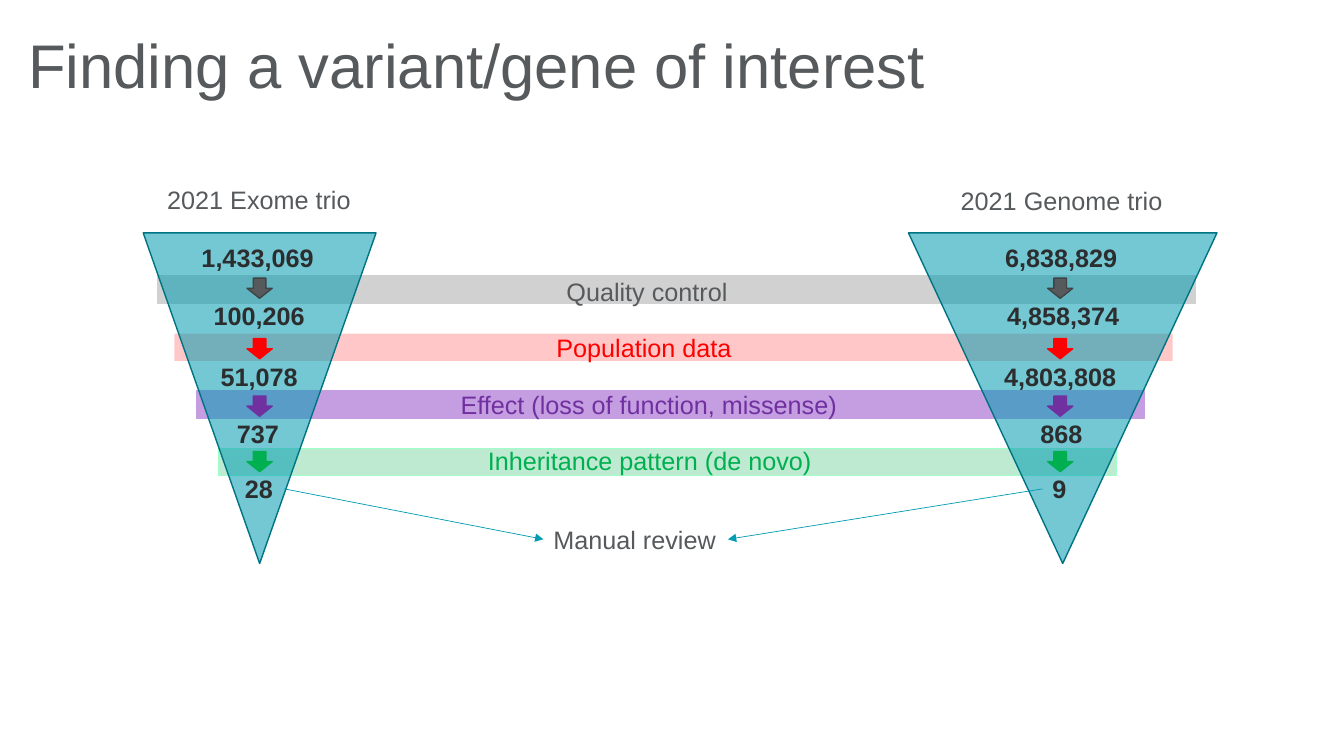
from pptx import Presentation
from pptx.dml.color import RGBColor
from pptx.enum.shapes import MSO_CONNECTOR as Connector, MSO_SHAPE as Preset
from pptx.enum.text import MSO_ANCHOR as Anchor, PP_ALIGN as Align
from pptx.oxml.ns import qn
from pptx.util import Inches, Pt
from lxml.etree import SubElement


def colour(code):
    return RGBColor.from_string(code)


class FunnelPage:
    font = "Arial"
    grey = "565A5C"
    dark = "2B2D2E"
    teal = "009CB1"
    edge = "007383"

    def __init__(self, deck):
        self.page = deck.slides.add_slide(deck.slide_layouts[5])

    def set_text(self, box, words, size, code, bold=False):
        para = box.text_frame.paragraphs[0]
        para.text = words
        para.alignment = Align.LEFT
        para.font.name = self.font
        para.font.size = Pt(size)
        para.font.bold = bold
        para.font.color.rgb = colour(code)
        return para

    def title(self, words):
        box = self.page.shapes.title
        box.left, box.top = Inches(0.18), Inches(0.3)
        box.width, box.height = Inches(11.5), Inches(1.09)
        box.text_frame.vertical_anchor = Anchor.TOP
        self.set_text(box, words, 44, self.grey).line_spacing = 0.9

    def label(self, words, left, top, width, code=grey, bold=False):
        box = self.page.shapes.add_textbox(
            Inches(left), Inches(top), Inches(width), Inches(0.4))
        box.text_frame.word_wrap = False
        self.set_text(box, words, 18, code, bold)

    def shape(self, preset, left, top, width, height, fill, line=None, opacity=100):
        shape = self.page.shapes.add_shape(
            preset, Inches(left), Inches(top), Inches(width), Inches(height))
        shape.shadow.inherit = False
        shape.fill.solid()
        shape.fill.fore_color.rgb = colour(fill)
        if opacity < 100:
            solid = shape._element.spPr.find(qn("a:solidFill"))
            SubElement(solid[0], qn("a:alpha")).set("val", str(opacity * 1000))
        if line:
            shape.line.color.rgb = colour(line)
            shape.line.width = Pt(1)
        else:
            shape.line.fill.background()
        return shape

    def funnel(self, left, width):
        triangle = self.shape(Preset.ISOSCELES_TRIANGLE, left, 2.31, width, 3.28,
                              self.teal, self.edge, 55)
        triangle.rotation = 180

    def arrow(self, start, end):
        arrow = self.page.shapes.add_connector(
            Connector.STRAIGHT, *(Inches(value) for value in start + end))
        arrow.line.color.rgb = colour(self.teal)
        arrow.line.width = Pt(0.5)
        outline = arrow._element.spPr.find(qn("a:ln"))
        SubElement(outline, qn("a:tailEnd")).set("type", "triangle")
        SubElement(arrow._element.spPr, qn("a:effectLst"))


FILTERS = [
    ("Quality control", 5.52, 1.87, "565A5C", "404345",
     (1.56, 10.3, "D1D1D1", "D1D1D1", 100)),
    ("Population data", 5.42, 1.96, "FF0000", "FF0000",
     (1.73, 9.9, "FF0000", None, 22)),
    ("Effect (loss of function, missense)", 4.47, 3.97, "7030A0", "7030A0",
     (1.95, 9.4, "C59EE2", "C59EE2", 100)),
    ("Inheritance pattern (de novo)", 4.74, 3.44, "00B050", "00B050",
     (2.17, 8.9, "00B050", "9FFFCA", 26)),
]
ARROW_TOPS = [2.76, 3.36, 3.93, 4.48]
COUNT_TOPS = [2.36, 2.93, 3.54, 4.1, 4.65]
TRIOS = [
    ("2021 Genome trio", 9.43, 1.79, 2.25, 9.01, 3.06, 10.39,
     [("6,838,829", 9.87, 1.38), ("4,858,374", 9.89, 1.33),
      ("4,803,808", 9.86, 1.39), ("868", 10.22, 0.66), ("9", 10.34, 0.42)]),
    ("2021 Exome trio", 1.56, 1.78, 2.03, 1.42, 2.31, 2.45,
     [("1,433,069", 1.9, 1.35), ("100,206", 2.02, 1.12),
      ("51,078", 2.09, 0.97), ("737", 2.25, 0.65), ("28", 2.33, 0.48)]),
]


def main():
    deck = Presentation()
    deck.slide_width, deck.slide_height = Inches(13.33), Inches(7.5)
    funnels = FunnelPage(deck)
    funnels.title("Finding a variant/gene of interest")

    for row, (*_, band) in enumerate(FILTERS):
        left, width, fill, line, opacity = band
        funnels.shape(Preset.RECTANGLE, left, 2.74 + 0.57 * row, width, 0.27,
                      fill, line, opacity)

    for name, left, top, width, funnel_left, funnel_width, arrow_left, counts in TRIOS:
        funnels.funnel(funnel_left, funnel_width)
        funnels.label(name, left, top, width)
        for (count, count_left, count_width), count_top in zip(counts, COUNT_TOPS):
            funnels.label(count, count_left, count_top, count_width,
                          funnels.dark, bold=True)
        for (_, _, _, code, outline, _), arrow_top in zip(FILTERS, ARROW_TOPS):
            funnels.shape(Preset.DOWN_ARROW, arrow_left, arrow_top, 0.25, 0.2,
                          code, outline)

    for row, (name, left, width, code, _, _) in enumerate(FILTERS):
        funnels.label(name, left, 2.69 + 0.56 * row, width, code)

    funnels.label("Manual review", 5.39, 5.15, 1.83)
    funnels.arrow((10.34, 4.85), (7.22, 5.35))
    funnels.arrow((2.82, 4.85), (5.39, 5.35))
    deck.save("out.pptx")


if __name__ == "__main__":
    main()
